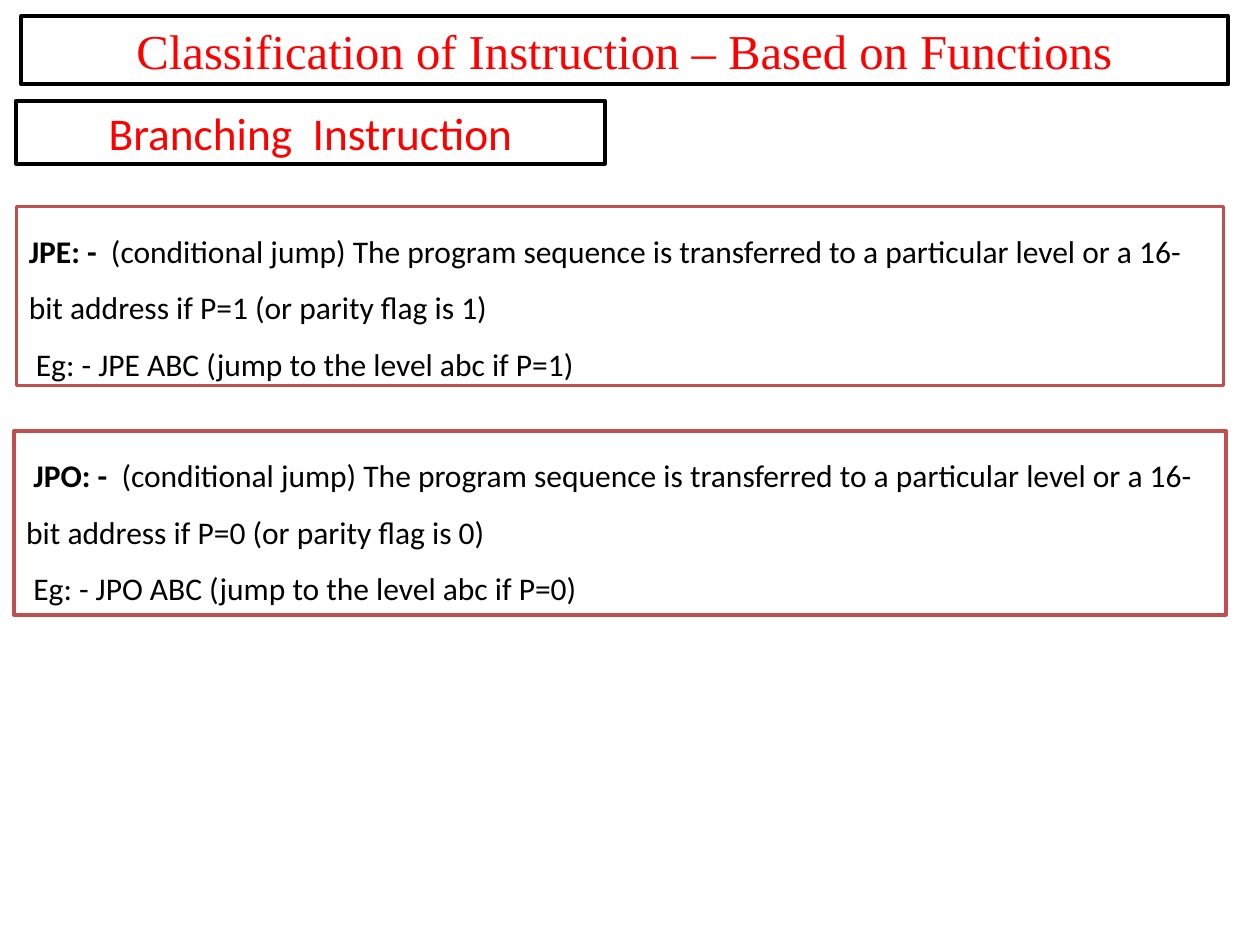
from pptx import Presentation
from pptx.dml.color import RGBColor
from pptx.enum.shapes import MSO_SHAPE
from pptx.enum.text import MSO_ANCHOR, MSO_AUTO_SIZE, PP_ALIGN
from pptx.util import Inches, Pt

RED = RGBColor(0xFF, 0x00, 0x00)
BLACK = RGBColor(0x00, 0x00, 0x00)
WHITE = RGBColor(0xFF, 0xFF, 0xFF)
BRICK = RGBColor(0xC0, 0x50, 0x4D)
RECTANGLE = MSO_SHAPE.RECTANGLE
TITLE_ONLY = 5
WIDTH, HEIGHT = Inches(10), Inches(7.5)

NBSP = chr(160)
# Lead-in, mnemonic, parity value, then left, top, width, height in inches
JUMPS = [
    ("", "JPE", 1, (0.13, 1.64, 9.58, 1.42)),
    (NBSP, "JPO", 0, (0.11, 3.42, 9.62, 1.46)),
]


def add_rectangle(slide, area):
    box = slide.shapes.add_shape(RECTANGLE, *map(Inches, area))
    box.shadow.inherit = False
    return box


def style_heading(box, text, font_name, size):
    """Centre red text in a black outlined frame."""
    box.fill.background()
    box.line.color.rgb = BLACK
    box.line.width = Pt(2.25)
    frame = box.text_frame
    frame.text = text
    frame.word_wrap = True
    frame.auto_size = MSO_AUTO_SIZE.NONE
    frame.vertical_anchor = MSO_ANCHOR.MIDDLE
    para = frame.paragraphs[0]
    para.alignment = PP_ALIGN.CENTER
    para.space_before = Pt(0.2 * size)
    para.font.name = font_name
    para.font.size = Pt(size)
    para.font.color.rgb = RED


def add_jump(slide, lead, mnemonic, parity, area):
    box = add_rectangle(slide, area)
    box.fill.solid()
    box.fill.fore_color.rgb = WHITE
    box.line.color.rgb = BRICK
    box.line.width = Pt(2)
    frame = box.text_frame
    frame.word_wrap = True
    frame.vertical_anchor = MSO_ANCHOR.TOP

    meaning = frame.paragraphs[0]
    spans = [
        (lead, False),
        (f"{mnemonic}: -", True),
        (f"{NBSP} (conditional jump) The program sequence is transferred to a "
         f"particular level or a 16-bit address if P={parity} "
         f"(or parity flag is {parity})", False),
    ]
    for text, bold in spans:
        if text:
            span = meaning.add_run()
            span.text = text
            span.font.bold = bold
    example = frame.add_paragraph()
    example.text = f"{NBSP}Eg: - {mnemonic} ABC (jump to the level abc if P={parity})"

    for para in frame.paragraphs:
        para.alignment = PP_ALIGN.LEFT
        para.line_spacing = 1.5
        para.font.name = "Calibri"
        para.font.size = Pt(18)
        para.font.color.rgb = BLACK


def main():
    deck = Presentation()
    deck.slide_width, deck.slide_height = WIDTH, HEIGHT
    slide = deck.slides.add_slide(deck.slide_layouts[TITLE_ONLY])

    title = slide.shapes.title
    title.left, title.top, title.width, title.height = map(
        Inches, (0.17, 0.13, 9.58, 0.54))
    style_heading(title, "Classification of Instruction – Based on Functions",
                  "Times New Roman", 27.8)
    subtitle = add_rectangle(slide, (0.13, 0.8, 4.67, 0.5))
    style_heading(subtitle, "Branching  Instruction", "Calibri", 25.9)

    for jump in JUMPS:
        add_jump(slide, *jump)
    deck.save("out.pptx")


if __name__ == "__main__":
    main()
